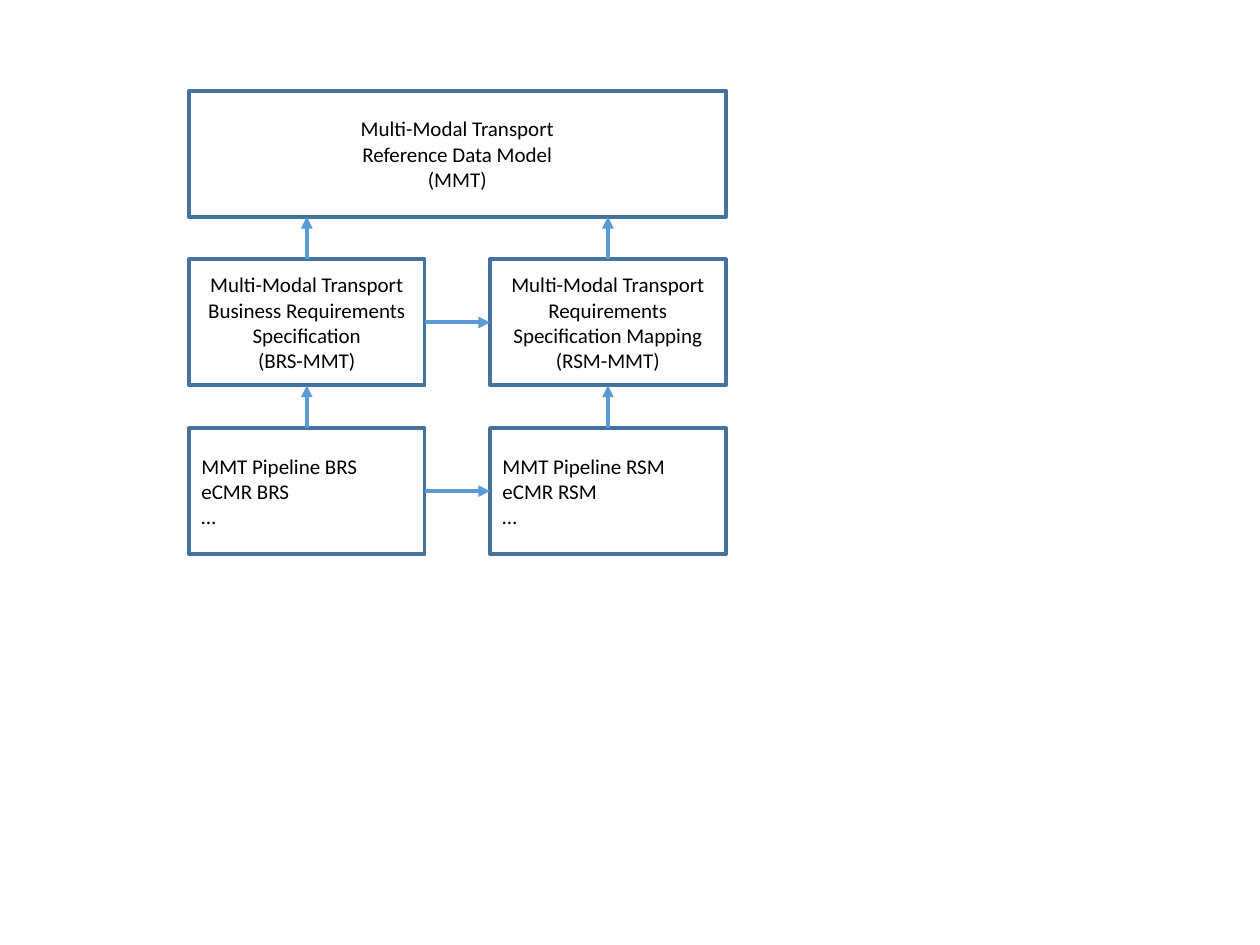
from lxml.etree import SubElement
from pptx import Presentation
from pptx.dml.color import RGBColor
from pptx.enum.shapes import MSO_CONNECTOR as Connector, MSO_SHAPE as Shape
from pptx.enum.text import MSO_ANCHOR as Anchor, PP_ALIGN as Align
from pptx.oxml.ns import qn
from pptx.util import Cm, Pt

COLORS = {"border": "43739E", "arrow": "5B9BD5", "text": "000000"}
LEFT, TOP = 3.81, 1.83
BOX_W, BOX_H = 4.75, 2.54
COL_STEP, ROW_STEP = 6.07, 3.4
SITE_TOP, SITE_LEFT, SITE_BOTTOM, SITE_RIGHT = range(4)

MODEL = ["Multi-Modal Transport", "Reference Data Model", "(MMT)"]
SPECIFICATIONS = [
    ["Multi-Modal Transport", "Business Requirements Specification", "(BRS-MMT)"],
    ["Multi-Modal Transport", "Requirements Specification Mapping", "(RSM-MMT)"],
]
PROJECTS = [
    ["MMT Pipeline BRS", "eCMR BRS", "…"],
    ["MMT Pipeline RSM", "eCMR RSM", "…"],
]


class Diagram:
    """Holds the style and the slide being drawn."""

    font = {"name": "Calibri", "size": Pt(12)}
    line_width = Pt(2.25)

    def __init__(self, slide):
        self.slide = slide

    def color(self, name):
        return RGBColor.from_string(COLORS[name])

    def style_line(self, line, color):
        line.color.rgb = self.color(color)
        line.width = self.line_width

    def box(self, col, row, lines, width=BOX_W, align=Align.CENTER):
        s = self.slide.shapes.add_shape(
            Shape.RECTANGLE, Cm(LEFT + col * COL_STEP), Cm(TOP + row * ROW_STEP),
            Cm(width), Cm(BOX_H))
        s.shadow.inherit = False
        s.fill.background()
        self.style_line(s.line, "border")
        tf = s.text_frame
        tf.word_wrap = True
        tf.vertical_anchor = Anchor.MIDDLE
        for i, text in enumerate(lines):
            p = tf.paragraphs[0] if i == 0 else tf.add_paragraph()
            p.alignment = align
            r = p.add_run()
            r.text = text
            for key, value in self.font.items():
                setattr(r.font, key, value)
            r.font.color.rgb = self.color("text")
        return s

    def arrow(self, x1, y1, x2, y2):
        c = self.slide.shapes.add_connector(Connector.STRAIGHT, x1, y1, x2, y2)
        self.style_line(c.line, "arrow")
        SubElement(c.line._get_or_add_ln(), qn("a:tailEnd"), type="triangle")
        SubElement(c._element.spPr, qn("a:effectLst"))
        return c

    def arrow_right(self, start, end):
        y = start.top + start.height // 2
        c = self.arrow(start.left + start.width, y, end.left, y)
        c.begin_connect(start, SITE_RIGHT)
        c.end_connect(end, SITE_LEFT)

    def arrow_up(self, start, end):
        """Rise straight from start; glue the head only to a box of equal width."""
        x = start.left + start.width // 2
        c = self.arrow(x, start.top, x, end.top + end.height)
        c.begin_connect(start, SITE_TOP)
        if end.width == start.width:
            c.end_connect(end, SITE_BOTTOM)


def main():
    prs = Presentation()
    prs.slide_width, prs.slide_height = Cm(25.4), Cm(19.05)
    blank = prs.slide_layouts[6]
    diagram = Diagram(prs.slides.add_slide(blank))

    model = diagram.box(0, 0, MODEL, width=COL_STEP + BOX_W)
    specs = [diagram.box(col, 1, lines) for col, lines in enumerate(SPECIFICATIONS)]
    projects = [diagram.box(col, 2, lines, align=Align.LEFT)
                for col, lines in enumerate(PROJECTS)]

    for pair in (specs, projects):
        diagram.arrow_right(*pair)
    for spec, project in zip(specs, projects):
        diagram.arrow_up(spec, model)
        diagram.arrow_up(project, spec)

    prs.save("out.pptx")


if __name__ == "__main__":
    main()
